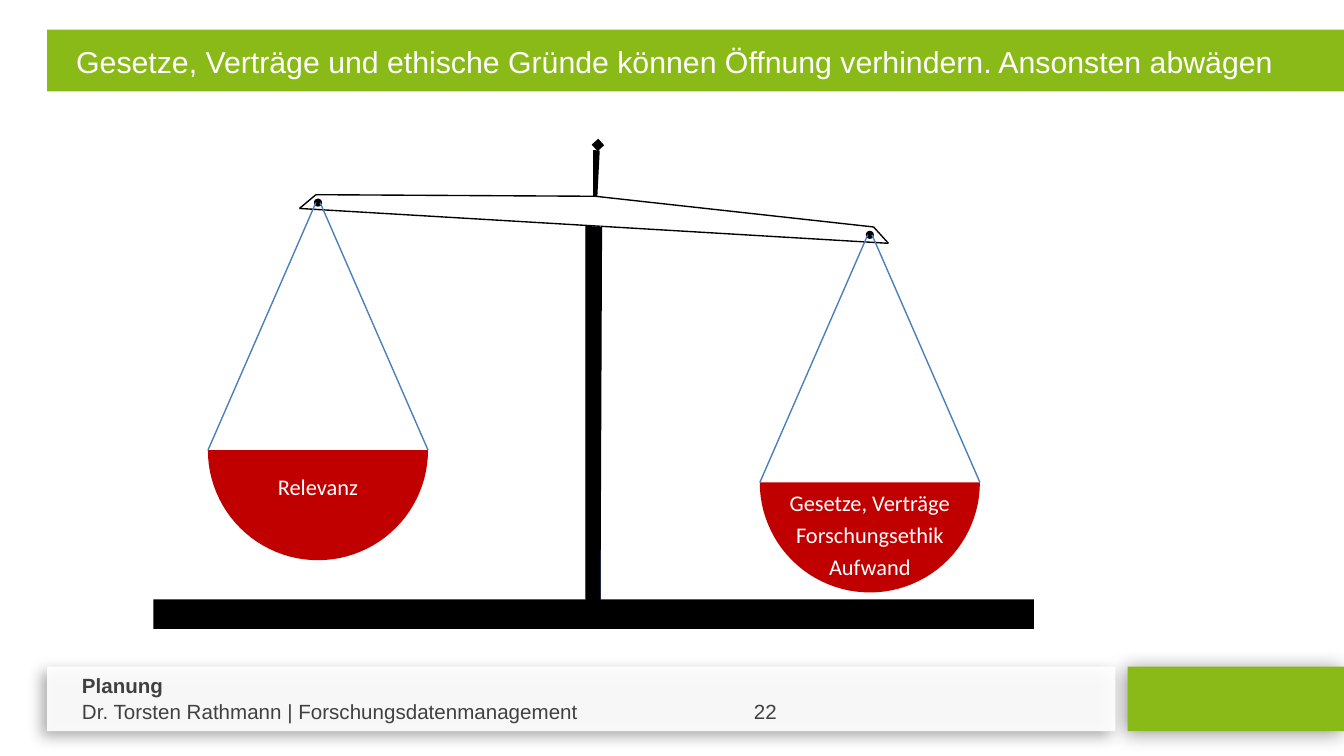
from math import cos, pi, sin

from lxml.etree import SubElement
from pptx import Presentation
from pptx.dml.color import RGBColor
from pptx.enum.shapes import MSO_CONNECTOR as LINE, MSO_SHAPE as SHAPE
from pptx.enum.text import MSO_ANCHOR as ANCHOR, MSO_AUTO_SIZE as AUTO, PP_ALIGN as ALIGN
from pptx.oxml.ns import qn
from pptx.util import Cm, Pt

COLORS = {
    "green": "89BA17",
    "white": "FFFFFF",
    "black": "000000",
    "grey": "404040",
    "red": "C00000",
    "blue": "4B7EBC",
}


def rgb(name):
    return RGBColor.from_string(COLORS[name])


class Deck:
    head_font = "Arial"
    label_font = "Calibri"

    def __init__(self, w, h):
        self.prs = Presentation()
        self.prs.slide_width, self.prs.slide_height = Cm(w), Cm(h)
        self.s = self.prs.slides.add_slide(self.prs.slide_layouts[5])

    def paint(self, sp, fill, line=None, width=0):
        sp.shadow.inherit = False
        sp.fill.solid()
        sp.fill.fore_color.rgb = rgb(fill)
        if line:
            sp.line.color.rgb = rgb(line)
            sp.line.width = Pt(width)
        else:
            sp.line.fill.background()
        return sp

    def shape(self, kind, x, y, w, h, fill, line=None, width=0):
        sp = self.s.shapes.add_shape(kind, Cm(x), Cm(y), Cm(w), Cm(h))
        return self.paint(sp, fill, line, width)

    def shadow(self, sp, alpha, blur, dist, angle):
        effects = sp.element.spPr.find(qn("a:effectLst"))
        outer = SubElement(effects, qn("a:outerShdw"), blurRad=str(Pt(blur)),
                           dist=str(Pt(dist)), dir=str(angle * 60000),
                           algn="ctr", rotWithShape="0")
        color = SubElement(outer, qn("a:srgbClr"), val=COLORS["black"])
        SubElement(color, qn("a:alpha"), val=str(alpha * 1000))

    def opacity(self, sp, alpha):
        color = sp.element.spPr.find(qn("a:solidFill")).find(qn("a:srgbClr"))
        SubElement(color, qn("a:alpha"), val=str(alpha * 1000))

    def polygon(self, points, fill):
        pts = [(Cm(x), Cm(y)) for x, y in points]
        fb = self.s.shapes.build_freeform(*pts[0], scale=1.0)
        fb.add_line_segments(pts[1:], close=True)
        return self.paint(fb.convert_to_shape(), fill)

    def line(self, start, end, color="black", width=0.75, tail=None):
        x1, y1, x2, y2 = (Cm(v) for v in (*start, *end))
        c = self.s.shapes.add_connector(LINE.STRAIGHT, x1, y1, x2, y2)
        c.line.color.rgb = rgb(color)
        c.line.width = Pt(width)
        if tail:
            SubElement(c.line._get_or_add_ln(), qn("a:tailEnd"), type=tail)
        SubElement(c.element.spPr, qn("a:effectLst"))

    def style(self, p, font, size, color, bold=False, align=ALIGN.LEFT):
        p.alignment = align
        for r in p.runs:
            r.font.name, r.font.size, r.font.bold = font, Pt(size), bold
            r.font.color.rgb = rgb(color)

    def title(self, text, x, y, w, h):
        sp = self.s.shapes.title
        sp.element.getparent().append(sp.element)
        sp.left, sp.top, sp.width, sp.height = Cm(x), Cm(y), Cm(w), Cm(h)
        tf = sp.text_frame
        tf.text = text
        tf.word_wrap, tf.auto_size = True, AUTO.NONE
        tf.vertical_anchor = ANCHOR.TOP
        tf.margin_left, tf.margin_top = Cm(0.55), Cm(0.25)
        self.style(tf.paragraphs[0], self.head_font, 16.2, "white")

    def footer(self, section, text, tab, x, y, w, h):
        tf = self.s.shapes.add_textbox(Cm(x), Cm(y), Cm(w), Cm(h)).text_frame
        tf.word_wrap = True
        tf.text = f"{section}\n{text}"
        tabs = SubElement(tf.paragraphs[1]._p.get_or_add_pPr(), qn("a:tabLst"))
        SubElement(tabs, qn("a:tab"), pos=str(Cm(tab)), algn="l")
        for p, bold in zip(tf.paragraphs, (True, False)):
            self.style(p, self.head_font, 11, "grey", bold)
        tf.paragraphs[1].space_before = Pt(0.7)

    def label(self, text, cx, y, w):
        tf = self.s.shapes.add_textbox(Cm(cx - w / 2), Cm(y), Cm(w), Cm(0.77)).text_frame
        tf.text = text
        tf.word_wrap = False
        self.style(tf.paragraphs[0], self.label_font, 12, "white", align=ALIGN.CENTER)

    def pan(self, cx, y, labels, offset):
        radius, drop, dot, steps = 2.08, 4.68, 0.08, 48
        angles = [pi * i / steps for i in range(steps + 1)]
        self.polygon([(cx + radius * cos(a), y + radius * sin(a)) for a in angles], "red")
        self.shape(SHAPE.OVAL, cx - dot / 2, y - drop - dot / 2, dot, dot, "black", "black", 2)
        for side in (-1, 1):
            self.line((cx + side * radius, y), (cx + side * 0.04, y - drop), "blue")
        for i, (text, w) in enumerate(labels):
            self.label(text, cx, y + offset + i * 0.61, w)


def main():
    d = Deck(25.4, 14.29)

    mark = d.shape(SHAPE.RECTANGLE, 21.31, 12.6, 4.09, 1.22, "green")
    d.shadow(mark, 42, 10.8, 2, 142)
    strip = d.shape(SHAPE.RECTANGLE, 0.89, 12.6, 20.19, 1.22, "white")
    d.opacity(strip, 91)
    d.shadow(strip, 34, 7.5, 4, 145)
    d.footer("Planung", "Dr. Torsten Rathmann | Forschungsdatenmanagement\t22",
             12.7, 1.3, 12.6, 15.19, 1.19)

    d.shape(SHAPE.RECTANGLE, 0.89, 0.56, 24.61, 1.17, "green")
    d.title("Gesetze, Verträge und ethische Gründe können Öffnung verhindern. "
            "Ansonsten abwägen", 0.89, 0.56, 24.61, 0.89)

    pivot = (11.25, 3.71)
    beam = [(5.66, 3.94), (5.97, 3.68), pivot, (16.51, 4.29), (16.79, 4.6)]
    for start, end in zip(beam, beam[1:] + beam[:1]):
        d.line(start, end)
    d.line(pivot, (11.3, 2.74), width=2.25, tail="diamond")
    d.line((11.23, 2.84), (11.23, 3.71), width=1.5)

    for x in (11.07, 11.35):
        d.line((x, 4.27), (x, 11.33), "blue")
    d.shape(SHAPE.RECTANGLE, 2.9, 11.33, 16.64, 0.56, "black")
    d.polygon([(11.07, 4.27), (11.38, 4.29), (11.35, 11.46), (11.07, 11.46)], "black")

    d.pan(6.01, 8.51, [("Relevanz", 2.03)], 0.3)
    d.pan(16.44, 9.12, [("Gesetze, Verträge", 3.58), ("Forschungsethik", 3.3),
                        ("Aufwand", 2.06)], 0)

    d.prs.save("out.pptx")


if __name__ == "__main__":
    main()
